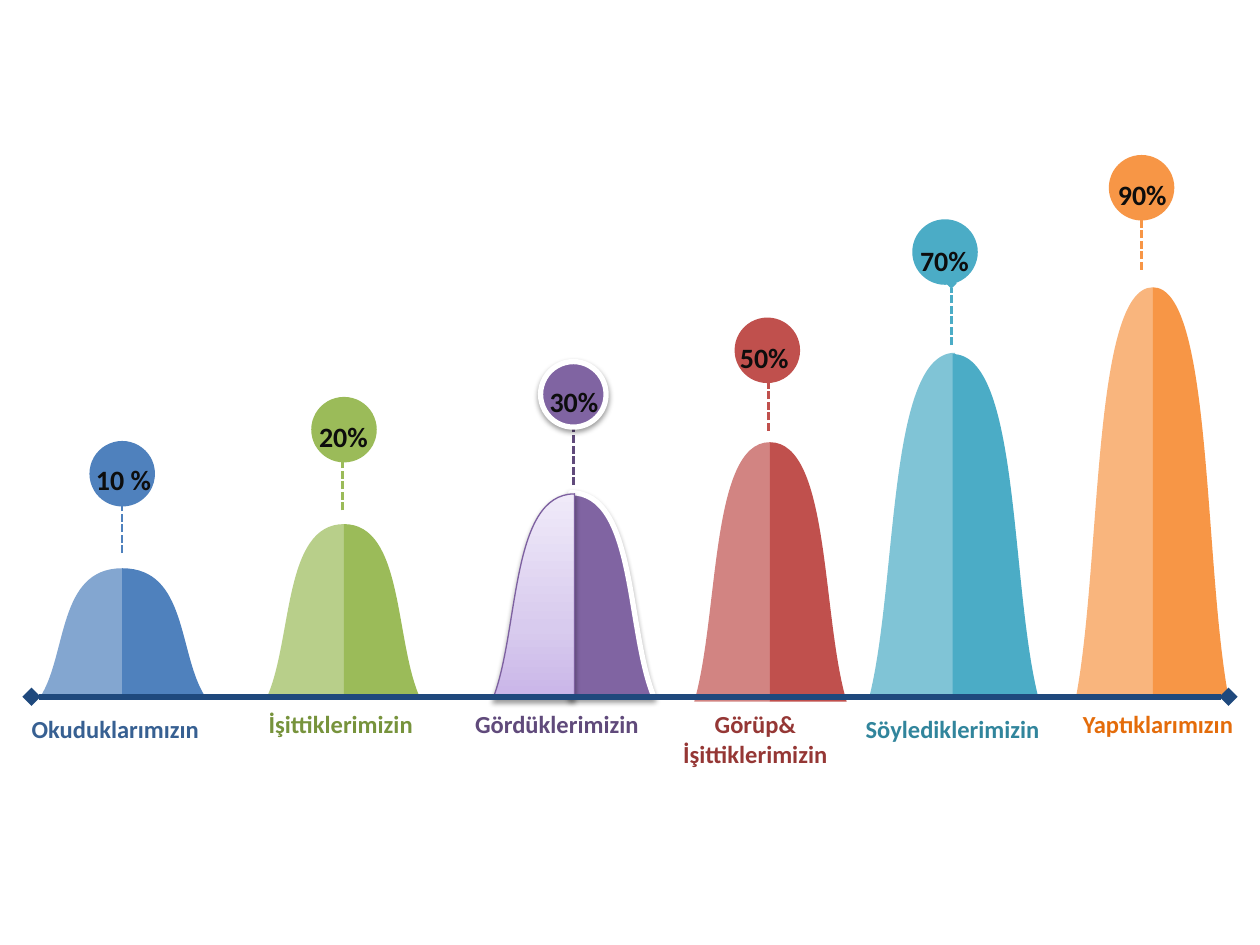
from dataclasses import dataclass
from typing import Optional

import pptx
import pptx.dml.color
import pptx.enum.dml
import pptx.enum.shapes
import pptx.enum.text
import pptx.oxml
import pptx.oxml.ns
import pptx.util
from pptx.util import Inches

NS = pptx.oxml.ns.nsdecls("a")


@dataclass(frozen=True)
class Theme:
    font: str = "Calibri"
    label_size: int = 14
    value_size: int = 16
    value_color: str = "0D0D0D"
    axis: str = "1F497D"
    outline: str = "FFFFFF"
    soft_outline: str = "7D60A0"
    soft_stops: tuple = ((0, "C9B5E8"), (35, "D8CBEE"), (100, "F0EAF9"))
    shade_alpha: int = 70


@dataclass(frozen=True)
class Half:
    """One side of a bell; a negative width points left."""
    center: float
    top: float
    base: float
    width: float


@dataclass(frozen=True)
class Bell:
    value: str
    label: str
    color: str
    label_color: str
    dot: tuple          # left, top
    value_at: tuple     # left, top, width
    stem: tuple         # x, top
    label_at: tuple     # left, top, width
    left: Half
    right: Half
    stem_color: Optional[str] = None
    raised: bool = False


THEME = Theme()
DOT, STEM, AXIS_Y = 0.52, 0.49, 5.53

BELLS = [
    Bell("10 %", "Okuduklarımızın", "4F81BD", "376092", (0.71, 3.5),
         (0.66, 3.62, 0.64), (0.97, 3.9), (-0.11, 5.62, 2.05),
         Half(0.97, 4.51, 5.53, -0.65), Half(0.97, 4.51, 5.53, 0.66)),
    Bell("20%", "İşittiklerimizin", "9BBB59", "77933C", (2.47, 3.15),
         (2.43, 3.28, 0.59), (2.72, 3.56), (1.92, 5.58, 1.57),
         Half(2.73, 4.16, 5.53, -0.61), Half(2.73, 4.16, 5.53, 0.6)),
    Bell("30%", "Gördüklerimizin", "8064A2", "604A7B", (4.29, 2.87),
         (4.26, 3, 0.59), (4.55, 3.36), (3.57, 5.58, 1.7),
         Half(4.56, 3.92, 5.55, -0.65), Half(4.53, 3.91, 5.53, 0.66),
         stem_color="604A7B", raised=True),
    Bell("50%", "Görüp&\nİşittiklerimizin", "C0504D", "953735", (5.83, 2.52),
         (5.77, 2.65, 0.59), (6.1, 2.93), (5.21, 5.58, 1.57),
         Half(6.11, 3.51, 5.57, -0.6), Half(6.11, 3.51, 5.57, 0.61)),
    Bell("70%", "Söylediklerimizin", "4BACC6", "31859C", (7.24, 1.74),
         (7.2, 1.88, 0.59), (7.55, 2.25), (6.65, 5.62, 1.82),
         Half(7.58, 2.8, 5.53, -0.68), Half(7.56, 2.81, 5.53, 0.68)),
    Bell("90%", "Yaptıklarımızın", "F79646", "E46C0A", (8.8, 1.23),
         (8.77, 1.36, 0.59), (9.06, 1.65), (8.38, 5.58, 1.62),
         Half(9.15, 2.28, 5.53, -0.61), Half(9.15, 2.28, 5.53, 0.6)),
]


def rgb(color: str) -> pptx.dml.color.RGBColor:
    return pptx.dml.color.RGBColor.from_string(color)


def apply(target, values: dict) -> None:
    for name, value in values.items():
        setattr(target, name, value)


def set_line(line, color: str, width: float) -> None:
    line.color.rgb = rgb(color)
    line.width = pptx.util.Pt(width)


def paint(sp, color: str, alpha: int = 100) -> None:
    sp.shadow.inherit = False
    sp.line.fill.background()
    sp.fill.solid()
    sp.fill.fore_color.rgb = rgb(color)
    if alpha < 100:
        clr = sp._element.spPr.find(pptx.oxml.ns.qn("a:solidFill"))[0]
        clr.append(pptx.oxml.parse_xml(f'<a:alpha {NS} val="{alpha * 1000}"/>'))


def raise_shape(sp, color: str, width: float) -> None:
    """Outline and drop shadow of the emphasised bell."""
    set_line(sp.line, color, width)
    effects = sp._element.spPr.find(pptx.oxml.ns.qn("a:effectLst"))
    effects.append(pptx.oxml.parse_xml(
        f'<a:outerShdw {NS} blurRad="{pptx.util.Pt(3.1)}" dist="{pptx.util.Pt(1.6)}" '
        'dir="5400000" rotWithShape="0"><a:srgbClr val="000000">'
        '<a:alpha val="38000"/></a:srgbClr></a:outerShdw>'))


def add_line(shapes, start: tuple, end: tuple, color: str, width: float,
             ends: tuple, dashed: bool = False) -> None:
    cx = shapes.add_connector(pptx.enum.shapes.MSO_CONNECTOR.STRAIGHT,
                              *(Inches(v) for v in start + end))
    set_line(cx.line, color, width)
    if dashed:
        cx.line.dash_style = pptx.enum.dml.MSO_LINE.SQUARE_DOT
    ln = cx._element.spPr.find(pptx.oxml.ns.qn("a:ln"))
    for end_name in ends:
        ln.append(pptx.oxml.parse_xml(f'<a:{end_name} {NS} type="diamond"/>'))
    cx._element.spPr.append(pptx.oxml.parse_xml(f"<a:effectLst {NS}/>"))


def add_half(shapes, half: Half):
    """Draw foot, base centre and apex, then curve back to the foot."""
    foot = half.center + half.width
    fb = shapes.build_freeform(Inches(foot), Inches(half.base))
    fb.add_line_segments([(Inches(half.center), Inches(half.base)),
                          (Inches(half.center), Inches(half.top))], close=True)
    sp = fb.convert_to_shape()
    origin = min(foot, half.center)
    points = "".join(
        f'<a:pt x="{Inches(half.center + half.width * x - origin)}" '
        f'y="{Inches((half.base - half.top) * y)}"/>'
        for x, y in ((0.79, 0), (0.67, 0.67), (1, 1)))
    close = next(sp._element.iter(pptx.oxml.ns.qn("a:close")))
    close.addprevious(pptx.oxml.parse_xml(
        f"<a:cubicBezTo {NS}>{points}</a:cubicBezTo>"))
    return sp


def fill_soft(sp) -> None:
    sp.fill.gradient()
    grad = sp._element.spPr.find(pptx.oxml.ns.qn("a:gradFill"))
    stops = "".join(f'<a:gs pos="{pos * 1000}"><a:srgbClr val="{color}"/></a:gs>'
                    for pos, color in THEME.soft_stops)
    grad.getparent().replace(grad, pptx.oxml.parse_xml(
        f'<a:gradFill {NS} rotWithShape="1"><a:gsLst>{stops}</a:gsLst>'
        '<a:lin ang="16200000" scaled="0"/></a:gradFill>'))


def add_text(shapes, text: str, left: float, top: float, width: float,
             size: int, color: str) -> None:
    lines = text.split("\n")
    height = 0.1 + len(lines) * size / 60
    tf = shapes.add_textbox(Inches(left), Inches(top),
                            Inches(width), Inches(height)).text_frame
    apply(tf, {"word_wrap": False,
               "auto_size": pptx.enum.text.MSO_AUTO_SIZE.SHAPE_TO_FIT_TEXT})
    for i, line in enumerate(lines):
        p = tf.add_paragraph() if i else tf.paragraphs[0]
        p.alignment = pptx.enum.text.PP_ALIGN.CENTER
        r = p.add_run()
        r.text = line
        apply(r.font, {"name": THEME.font, "size": pptx.util.Pt(size), "bold": True})
        r.font.color.rgb = rgb(color)


def add_bell(shapes, bell: Bell) -> None:
    # Dashed stem and value dot
    x, y = bell.stem
    add_line(shapes, (x, y + STEM), (x, y), bell.stem_color or bell.color, 1.5,
             ("tailEnd",), dashed=True)
    dot = shapes.add_shape(pptx.enum.shapes.MSO_SHAPE.OVAL,
                           *(Inches(v) for v in bell.dot + (DOT, DOT)))
    paint(dot, bell.color)

    # Solid right half, lighter left half
    right = add_half(shapes, bell.right)
    paint(right, bell.color)
    left = add_half(shapes, bell.left)
    paint(left, bell.color, THEME.shade_alpha)
    if bell.raised:
        fill_soft(left)
        raise_shape(left, THEME.soft_outline, 0.75)
        for sp in (dot, right):
            raise_shape(sp, THEME.outline, 3)

    # Value and label
    add_text(shapes, bell.value, *bell.value_at, THEME.value_size, THEME.value_color)
    add_text(shapes, bell.label, *bell.label_at, THEME.label_size, bell.label_color)


def main() -> None:
    prs = pptx.Presentation()
    apply(prs, {"slide_width": Inches(10), "slide_height": Inches(7.5)})
    shapes = prs.slides.add_slide(prs.slide_layouts[6]).shapes
    for bell in BELLS:
        add_bell(shapes, bell)
    # Base axis lies over the feet of the bells
    add_line(shapes, (0.25, AXIS_Y), (9.75, AXIS_Y), THEME.axis, 3.5,
             ("headEnd", "tailEnd"))
    prs.save("out.pptx")


if __name__ == "__main__":
    main()
